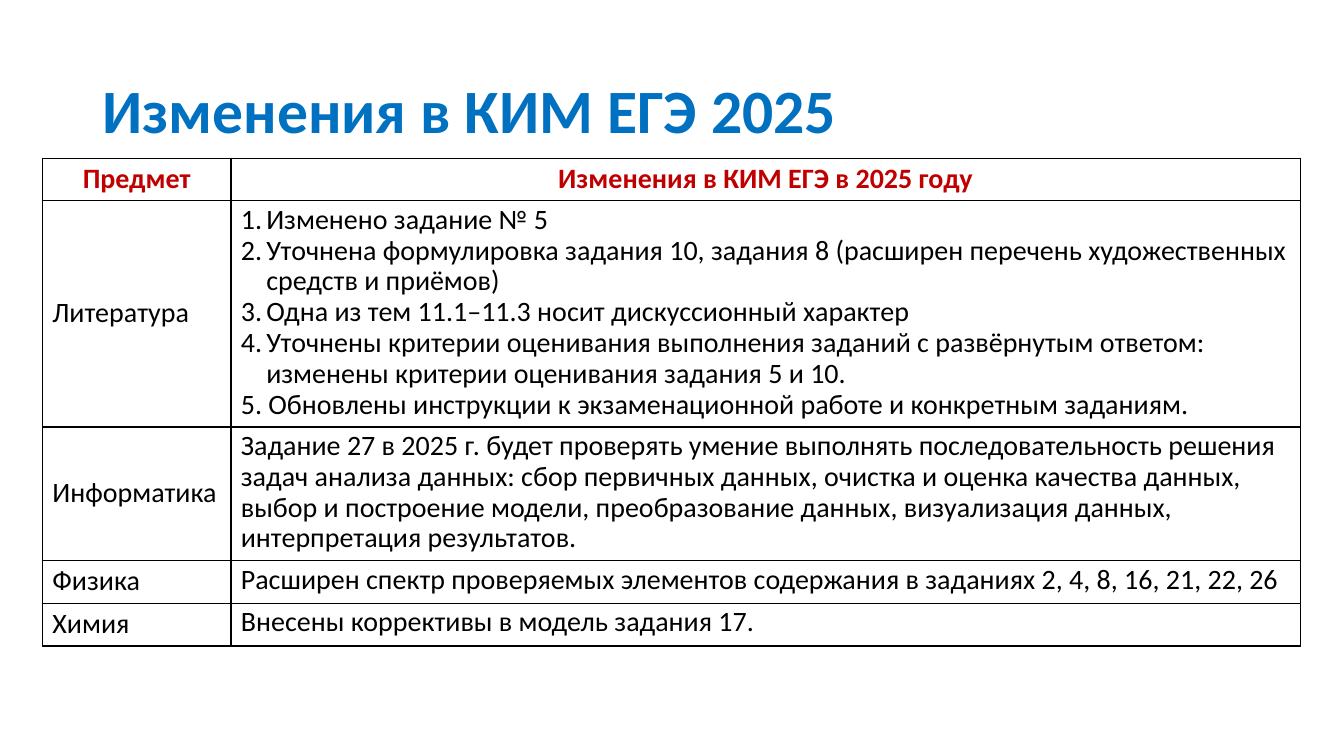
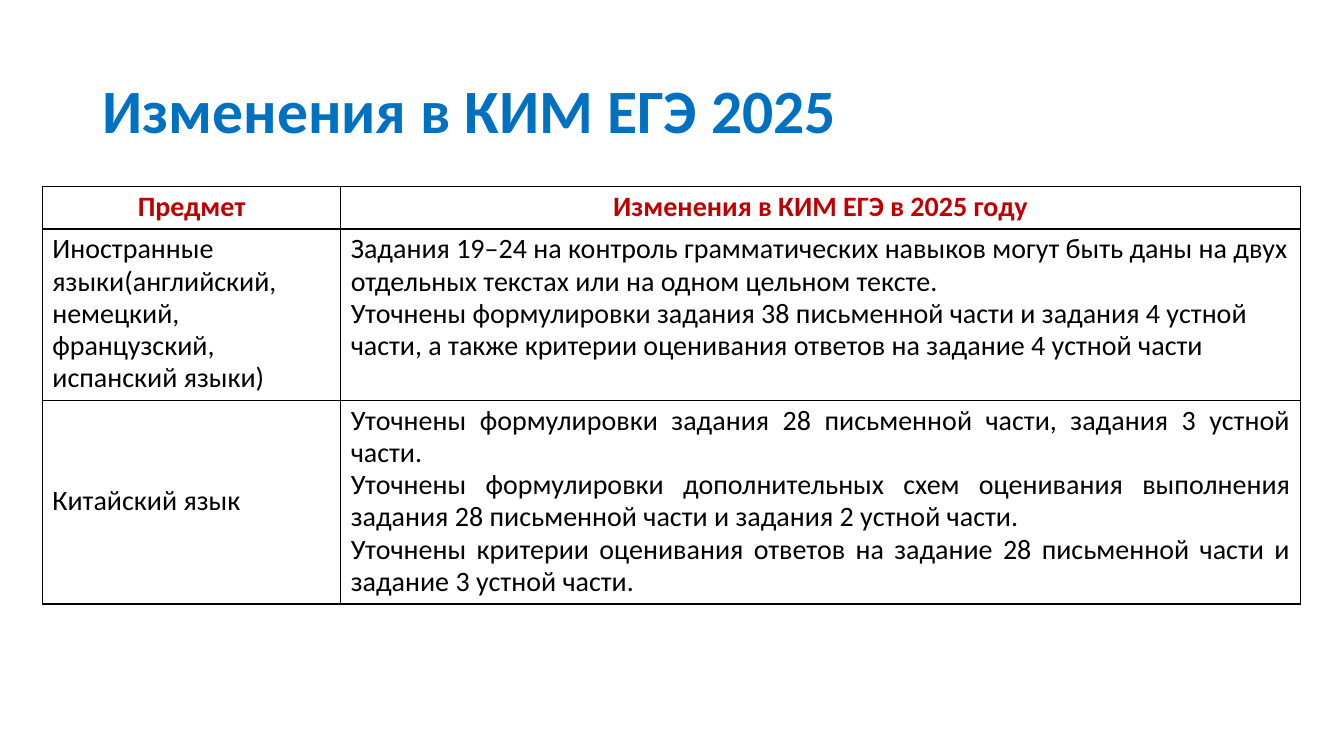
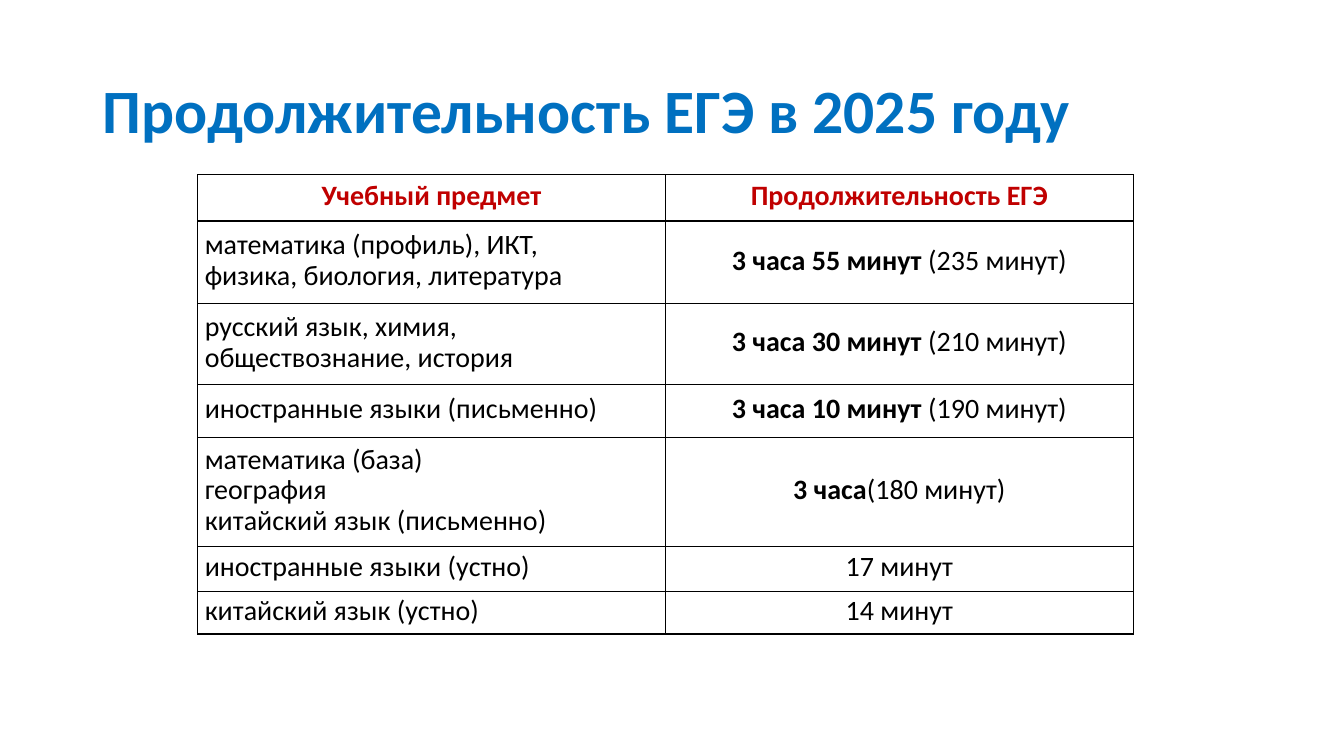
from dataclasses import dataclass
from typing import NamedTuple

from lxml.etree import SubElement
from pptx import Presentation
from pptx.dml.color import RGBColor
from pptx.enum.text import MSO_ANCHOR, PP_ALIGN
from pptx.oxml.ns import qn
from pptx.util import Cm, Pt


@dataclass(frozen=True)
class Theme:
    face: str = "Calibri"
    title: str = "0070C0"
    head: str = "C00000"
    ink: str = "000000"
    paper: str = "FFFFFF"
    big: int = 44
    body: int = 20
    rule: float = 0.96


THEME = Theme()
LEFT, MID, FULL = PP_ALIGN.LEFT, PP_ALIGN.CENTER, PP_ALIGN.JUSTIFY


class Line(NamedTuple):
    text: str
    bold: str = ""
    num: bool = False


class Item(NamedTuple):
    lines: list[Line]
    align: PP_ALIGN = LEFT
    pitch: int = 23
    anchor: MSO_ANCHOR = MSO_ANCHOR.MIDDLE


class Page(NamedTuple):
    title: str
    left: float
    top: float
    cols: list[float]
    rows: list[float]
    heads: list[str]
    items: list[list[Item]]
    pitch: int = 23
    inset: float = 0.25


def item(*texts: str, align: PP_ALIGN = LEFT, pitch: int = 23) -> Item:
    return Item([Line(text) for text in texts], align, pitch)


def note(*texts: str, align: PP_ALIGN = LEFT, pitch: int = 22) -> Item:
    return item(*texts, align=align, pitch=pitch)._replace(anchor=MSO_ANCHOR.TOP)


def span(text: str, bold: str = "") -> Item:
    """Centred exam length, with an optional bold start."""
    return Item([Line(text, bold)], MID, 22)


def style(para, size: int, tint: str, bold: bool | None) -> None:
    font = para.font
    font.name, font.size = THEME.face, Pt(size)
    font.color.rgb = RGBColor.from_string(tint)
    if bold is not None:
        font.bold = bold


def number(para) -> None:
    props = para._p.get_or_add_pPr()
    props.set("marL", str(Cm(0.64)))
    props.set("indent", str(-Cm(0.64)))
    SubElement(props, qn("a:buFont"), typeface="+mj-lt")
    SubElement(props, qn("a:buAutoNum"), type="arabicPeriod")


def border(cell) -> None:
    props = cell._tc.get_or_add_tcPr()
    for side in ("lnL", "lnR", "lnT", "lnB"):
        edge = SubElement(props, qn(f"a:{side}"), w=str(Pt(THEME.rule)))
        fill = SubElement(edge, qn("a:solidFill"))
        SubElement(fill, qn("a:srgbClr"), val=THEME.ink)


def write(cell, data: Item, inset: float, head: bool) -> None:
    border(cell)
    if head:
        cell.fill.solid()
        cell.fill.fore_color.rgb = RGBColor.from_string(THEME.paper)
    else:
        cell.fill.background()
    cell.vertical_anchor = data.anchor
    cell.margin_left = cell.margin_right = Cm(inset)
    cell.margin_top = cell.margin_bottom = Cm(0.13)
    frame = cell.text_frame
    for pos, line in enumerate(data.lines):
        para = frame.add_paragraph() if pos else frame.paragraphs[0]
        para.alignment, para.line_spacing = data.align, Pt(data.pitch)
        if line.num:
            number(para)
        if line.bold:
            lead = para.add_run()
            lead.text, lead.font.bold = line.bold, True
        rest = para.add_run()
        rest.text = line.text
        if line.bold:
            rest.font.bold = False
        style(para, THEME.body, THEME.head if head else THEME.ink,
              None if line.bold else head)


def draw(deck, page: Page) -> None:
    slide = deck.slides.add_slide(deck.slide_layouts[6])
    box = slide.shapes.add_textbox(Cm(2.33), Cm(1.01), Cm(29.21), Cm(3.68))
    frame = box.text_frame
    frame.word_wrap, frame.vertical_anchor = True, MSO_ANCHOR.MIDDLE
    para = frame.paragraphs[0]
    para.text, para.line_spacing = page.title, 0.9
    style(para, THEME.big, THEME.title, True)

    grid = slide.shapes.add_table(
        len(page.rows), len(page.cols), Cm(page.left), Cm(page.top),
        Cm(sum(page.cols)), Cm(sum(page.rows))).table
    grid.horz_banding = False
    for col, width in zip(grid.columns, page.cols):
        col.width = Cm(width)
    for row, height in zip(grid.rows, page.rows):
        row.height = Cm(height)
    heads = [item(text, align=MID, pitch=page.pitch) for text in page.heads]
    for r, row in enumerate([heads, *page.items]):
        for c, data in enumerate(row):
            write(grid.cell(r, c), data, page.inset, r == 0)


CHANGES = "Изменения в КИМ ЕГЭ 2025"
HEADS = ["Предмет", "Изменения в КИМ ЕГЭ в 2025 году"]
STEPS = [
    "Изменено задание № 5",
    "Уточнена формулировка задания 10, задания 8 (расширен перечень "
    "художественных средств и приёмов)",
    "Одна из тем 11.1–11.3 носит дискуссионный характер",
    "Уточнены критерии оценивания выполнения заданий с развёрнутым ответом: "
    "изменены критерии оценивания задания 5 и 10.",
]
LAST = "5. Обновлены инструкции к экзаменационной работе и конкретным заданиям."

PAGES = [
    Page(CHANGES, 1.07, 3.99, [4.75, 26.95], [1.06, 5.7, 3.35, 1.08, 1.06], HEADS, [
        [item("Литература"),
         Item([*(Line(step, num=True) for step in STEPS), Line(LAST)],
              pitch=22, anchor=MSO_ANCHOR.TOP)],
        [item("Информатика"),
         note("Задание 27 в 2025 г. будет проверять умение выполнять "
              "последовательность решения задач анализа данных: сбор первичных "
              "данных, очистка и оценка качества данных, выбор и построение "
              "модели, преобразование данных, визуализация данных, "
              "интерпретация результатов.")],
        [item("Физика"),
         note("Расширен спектр проверяемых элементов содержания в заданиях "
              "2, 4, 8, 16, 21, 22, 26")],
        [item("Химия"), note("Внесены коррективы в модель задания 17.")],
    ]),
    Page(CHANGES, 1.07, 4.7, [7.52, 24.18], [1.06, 4.32, 5.12], HEADS, [
        [item("Иностранные",
              "языки(английский, немецкий, французский, испанский языки)"),
         note("Задания 19–24 на контроль грамматических навыков могут быть даны "
              "на двух отдельных текстах или на одном цельном тексте.",
              "Уточнены формулировки задания 38 письменной части и задания 4 "
              "устной части, а также критерии оценивания ответов на задание 4 "
              "устной части", pitch=23)],
        [item("Китайский язык"),
         note("Уточнены формулировки задания 28 письменной части, задания 3 "
              "устной части.",
              "Уточнены формулировки дополнительных схем оценивания выполнения "
              "задания 28 письменной части и задания 2 устной части.",
              "Уточнены критерии оценивания ответов на задание 28 письменной "
              "части и задание 3 устной части.", align=FULL, pitch=23)],
    ]),
    Page("Продолжительность ЕГЭ в 2025 году", 4.98, 4.4, [11.79, 11.79],
         [1.17, 2.08, 2.03, 1.35, 2.74, 1.14, 1.07],
         ["Учебный предмет", "Продолжительность ЕГЭ"], [
        [item("математика (профиль), ИКТ,", "физика, биология, литература", pitch=22),
         span("(235 минут)", "3 часа 55 минут ")],
        [item("русский язык, химия,", "обществознание, история", pitch=22),
         span("(210 минут)", "3 часа 30 минут ")],
        [item("иностранные языки (письменно)", pitch=22),
         span("(190 минут)", "3 часа 10 минут ")],
        [item("математика (база)", "география", "китайский язык (письменно)", pitch=22),
         span("(180 минут)", "3 часа")],
        [item("иностранные языки (устно)", pitch=22), span("17 минут")],
        [item("китайский язык (устно)", align=FULL, pitch=22), span("14 минут")],
    ], pitch=22, inset=0.18),
]


def main() -> None:
    deck = Presentation()
    deck.slide_width, deck.slide_height = Cm(33.87), Cm(19.05)
    for page in PAGES:
        draw(deck, page)
    deck.save("out.pptx")


if __name__ == "__main__":
    main()
